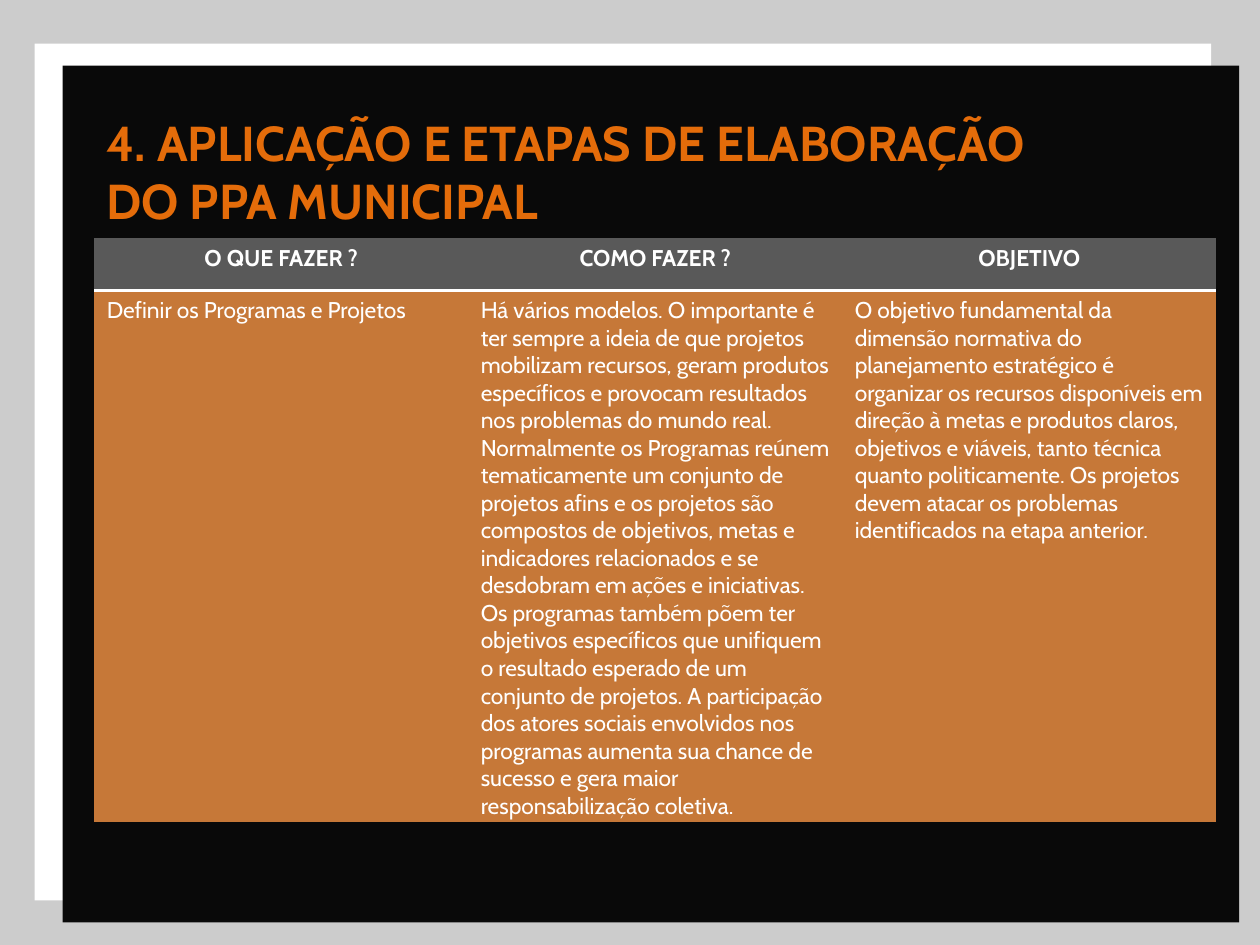
from dataclasses import dataclass

from lxml.etree import SubElement
from pptx import Presentation
from pptx.dml.color import RGBColor
from pptx.enum.shapes import MSO_SHAPE
from pptx.enum.text import PP_ALIGN
from pptx.oxml import parse_xml
from pptx.oxml.ns import nsdecls, qn
from pptx.util import Pt

FONT = "Cabin"
COLORS = {
    "white": "FFFFFF",
    "veil": "000000",
    "panel": "090909",
    "title": "E46C0A",
    "header": "595959",
    "body": "C67838",
}
PLAIN_STYLE = "{2D5ABB26-0587-4C30-8999-92F81FD0307C}"


@dataclass
class Panel:
    left: float
    top: float
    width: float
    height: float
    color: str
    alpha: int = 100


@dataclass
class Column:
    head: str
    body: str


PANELS = [
    Panel(0, 0, 720, 540, "veil", 20),
    Panel(19.8, 25, 672.3, 489.6, "white"),
    Panel(35.8, 37.6, 672.3, 489.6, "panel"),
]

COLUMNS = [
    Column("O QUE FAZER ?", "Definir os Programas e Projetos"),
    Column(
        "COMO FAZER ?",
        "Há vários modelos. O importante é ter sempre a ideia de que projetos "
        "mobilizam recursos, geram produtos específicos e provocam resultados "
        "nos problemas do mundo real. Normalmente os Programas reúnem "
        "tematicamente um conjunto de projetos afins e os projetos são "
        "compostos de objetivos, metas e indicadores relacionados e se "
        "desdobram em ações e iniciativas. Os programas também põem ter "
        "objetivos específicos que unifiquem o resultado esperado de um "
        "conjunto de projetos. A participação dos atores sociais envolvidos "
        "nos programas aumenta sua chance de sucesso e gera maior "
        "responsabilização coletiva.",
    ),
    Column(
        "OBJETIVO",
        "O objetivo fundamental da dimensão normativa do planejamento "
        "estratégico é organizar os recursos disponíveis em direção à metas e "
        "produtos claros, objetivos e viáveis, tanto técnica quanto "
        "politicamente. Os projetos devem atacar os problemas identificados "
        "na etapa anterior.",
    ),
]


def paint(fill, color: str) -> None:
    fill.solid()
    fill.fore_color.rgb = RGBColor.from_string(COLORS[color])


def write(frame, text: str, size: float, color: str, bold: bool) -> None:
    frame.text = text
    font = frame.paragraphs[0].font
    font.name, font.size, font.bold = FONT, Pt(size), bold
    font.color.rgb = RGBColor.from_string(COLORS[color])


def draw_panel(slide, panel: Panel) -> None:
    shape = slide.shapes.add_shape(
        MSO_SHAPE.RECTANGLE,
        Pt(panel.left), Pt(panel.top), Pt(panel.width), Pt(panel.height),
    )
    shape.shadow.inherit = False
    shape.line.fill.background()
    paint(shape.fill, panel.color)
    if panel.alpha < 100:
        tone = shape.fill._xPr.find(".//" + qn("a:srgbClr"))
        SubElement(tone, qn("a:alpha"), val=str(panel.alpha * 1000))


def draw_title(slide) -> None:
    box = slide.shapes.add_textbox(Pt(53.8), Pt(60.5), Pt(559.4), Pt(75))
    box.text_frame.word_wrap = True
    write(
        box.text_frame,
        "4. APLICAÇÃO E ETAPAS DE ELABORAÇÃO DO PPA MUNICIPAL",
        28, "title", True,
    )


def rule_below(cell, width: float, color: str) -> None:
    """Give a cell a solid bottom border."""
    line = parse_xml(
        f'<a:lnB {nsdecls("a")} w="{Pt(width)}"><a:solidFill>'
        f'<a:srgbClr val="{COLORS[color]}"/></a:solidFill></a:lnB>'
    )
    cell._tc.get_or_add_tcPr().insert(0, line)


def draw_table(slide, columns: list[Column]) -> None:
    heights = [30, 304]
    width = 213.75
    table = slide.shapes.add_table(
        len(heights), len(columns),
        Pt(53.8), Pt(136), Pt(width * len(columns)), Pt(sum(heights)),
    ).table
    table._tbl.tblPr.find(qn("a:tableStyleId")).text = PLAIN_STYLE
    table.horz_banding = False
    for row, height in zip(table.rows, heights):
        row.height = Pt(height)
    for i, column in enumerate(columns):
        table.columns[i].width = Pt(width)
        head, body = table.cell(0, i), table.cell(1, i)
        paint(head.fill, "header")
        write(head.text_frame, column.head, 13, "white", True)
        head.text_frame.paragraphs[0].alignment = PP_ALIGN.CENTER
        rule_below(head, 2, "white")
        paint(body.fill, "body")
        write(body.text_frame, column.body, 13, "white", False)


def main() -> None:
    deck = Presentation()
    deck.slide_width, deck.slide_height = Pt(720), Pt(540)
    slide = deck.slides.add_slide(deck.slide_layouts[6])
    paint(slide.background.fill, "white")
    for panel in PANELS:
        draw_panel(slide, panel)
    draw_title(slide)
    draw_table(slide, COLUMNS)
    deck.save("out.pptx")


if __name__ == "__main__":
    main()
